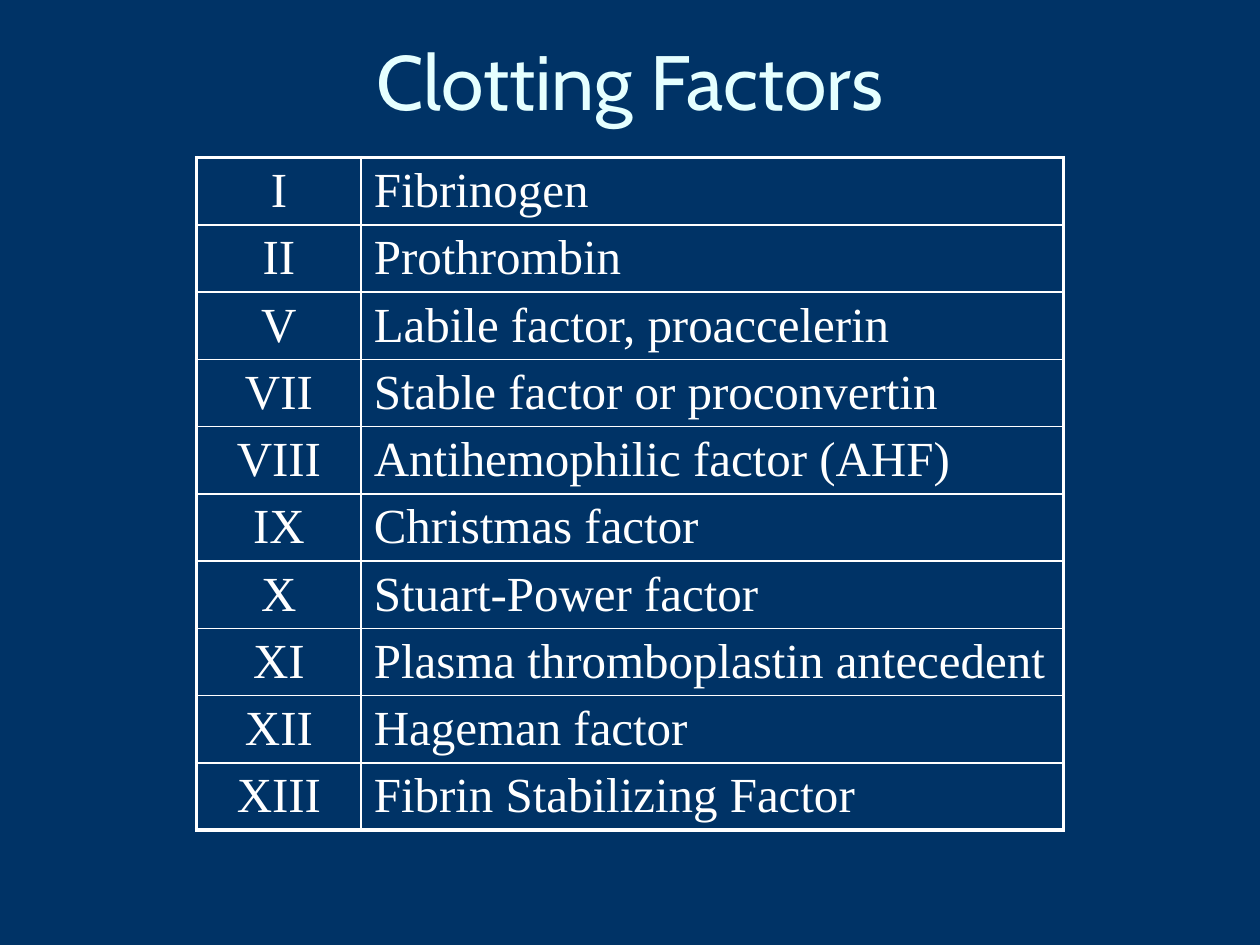
from dataclasses import dataclass

from lxml import etree
from pptx import Presentation
from pptx.dml.color import RGBColor
from pptx.enum.text import MSO_ANCHOR, MSO_AUTO_SIZE, PP_ALIGN
from pptx.oxml.ns import qn
from pptx.util import Inches, Pt

CENTER, LEFT = PP_ALIGN.CENTER, PP_ALIGN.LEFT
MIDDLE, TOP = MSO_ANCHOR.MIDDLE, MSO_ANCHOR.TOP
FIXED_SIZE = MSO_AUTO_SIZE.NONE
TITLE_ONLY = 5

FACTORS = [
    ("I", "Fibrinogen"),
    ("II", "Prothrombin"),
    ("V", "Labile factor, proaccelerin"),
    ("VII", "Stable factor or proconvertin"),
    ("VIII", "Antihemophilic factor (AHF)"),
    ("IX", "Christmas factor"),
    ("X", "Stuart-Power factor"),
    ("XI", "Plasma thromboplastin antecedent"),
    ("XII", "Hageman factor"),
    ("XIII", "Fibrin Stabilizing Factor"),
]


@dataclass(frozen=True)
class Theme:
    background: str = "003366"
    title_color: str = "E5FFFF"
    text_color: str = "FFFFFF"
    title_font: str = "Cabin"
    text_font: str = "Times New Roman"
    title_size: float = 44
    text_size: float = 28
    outer_line: float = 2.25
    inner_line: float = 1


class SlideBuilder:
    def __init__(self, deck, theme):
        self.theme = theme
        self.width, self.height = deck.slide_width, deck.slide_height
        self.page = deck.slides.add_slide(deck.slide_layouts[TITLE_ONLY])
        fill = self.page.background.fill
        fill.solid()
        fill.fore_color.rgb = RGBColor.from_string(theme.background)

    def place(self, left, top, width, height):
        return (round(left * self.width), round(top * self.height),
                round(width * self.width), round(height * self.height))

    def style(self, para, font, size, color, align):
        para.alignment = align
        para.font.name = font
        para.font.size = Pt(size)
        para.font.color.rgb = RGBColor.from_string(color)

    def title(self, text, area):
        box = self.page.shapes.title
        box.left, box.top, box.width, box.height = self.place(*area)
        frame = box.text_frame
        frame.text = text
        frame.auto_size = FIXED_SIZE
        frame.vertical_anchor = MIDDLE
        theme = self.theme
        self.style(frame.paragraphs[0], theme.title_font, theme.title_size,
                   theme.title_color, CENTER)

    def border(self, cell, side, weight):
        properties = cell._tc.get_or_add_tcPr()
        line = etree.SubElement(properties, qn(f"a:ln{side}"), w=str(Pt(weight)))
        fill = etree.SubElement(line, qn("a:solidFill"))
        etree.SubElement(fill, qn("a:srgbClr"), val=self.theme.text_color)

    def cell(self, cell, text, align, outer_sides):
        theme = self.theme
        cell.text = text
        cell.vertical_anchor = TOP
        cell.margin_top, cell.margin_bottom = Inches(0.05), Inches(0.03)
        self.style(cell.text_frame.paragraphs[0], theme.text_font,
                   theme.text_size, theme.text_color, align)
        for side in "LRTB":
            weight = theme.outer_line if side in outer_sides else theme.inner_line
            self.border(cell, side, weight)
        cell.fill.background()

    def table(self, rows, area, shares, aligns):
        left, top, width, height = self.place(*area)
        last_row, last_column = len(rows) - 1, len(shares) - 1
        grid = self.page.shapes.add_table(
            len(rows), len(shares), left, top, width, height).table
        grid.first_row = grid.horz_banding = False
        for column, share in zip(grid.columns, shares):
            column.width = round(width * share)
        for r, values in enumerate(rows):
            grid.rows[r].height = height // len(rows)
            for c, text in enumerate(values):
                edges = {"L": c == 0, "R": c == last_column,
                         "T": r == 0, "B": r == last_row}
                outer_sides = [side for side, outer in edges.items() if outer]
                self.cell(grid.cell(r, c), text, aligns[c], outer_sides)


def main():
    deck = Presentation()
    deck.slide_width, deck.slide_height = Inches(10), Inches(7.5)
    builder = SlideBuilder(deck, Theme())
    builder.title("Clotting Factors", (0.05, 0.42 / 7.5, 0.9, 0.42 / 7.5))
    builder.table(FACTORS, (0.156, 1.25 / 7.5, 0.688, 5.34 / 7.5),
                  (0.19, 0.81), (CENTER, LEFT))
    deck.save("out.pptx")


if __name__ == "__main__":
    main()
